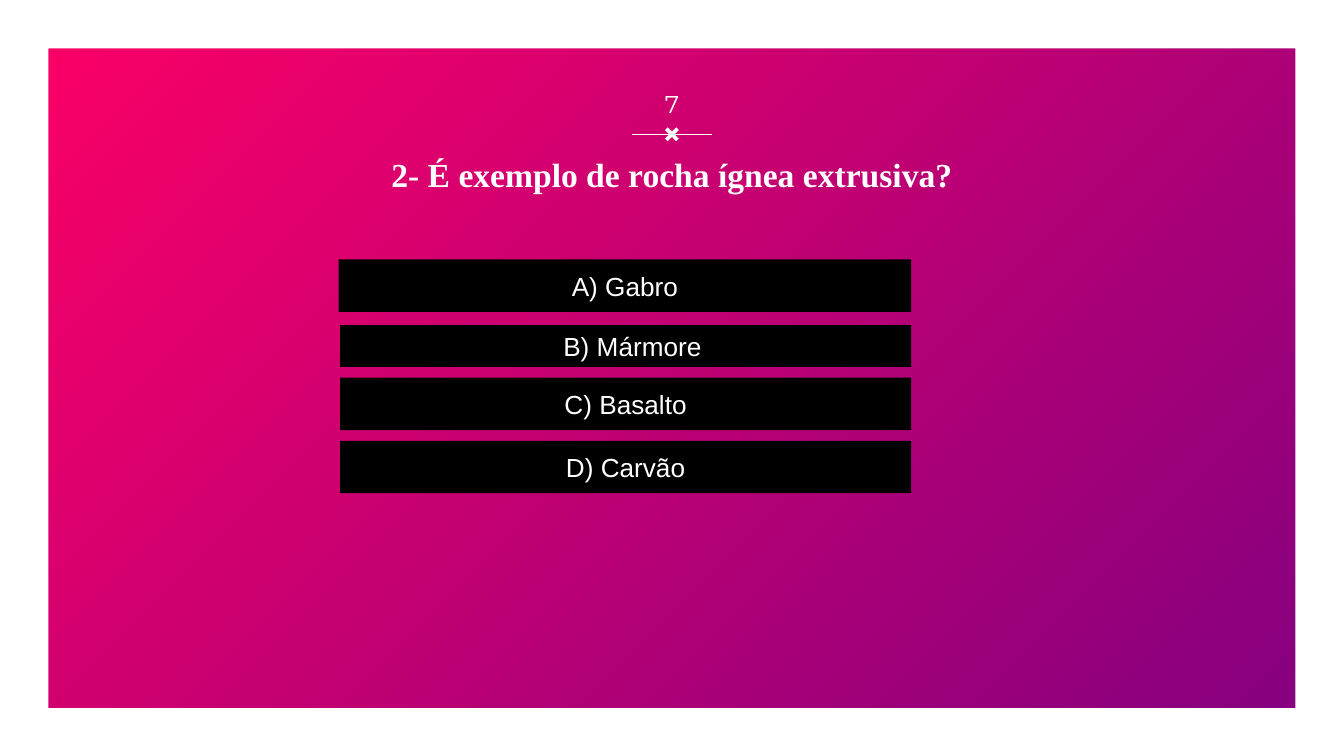
import pptx
import pptx.util
from lxml import etree
from pptx.dml.color import RGBColor
from pptx.enum.shapes import MSO_CONNECTOR, MSO_SHAPE
from pptx.enum.text import MSO_ANCHOR, PP_ALIGN
from pptx.oxml.ns import qn

Inches = pptx.util.Inches
Pt = pptx.util.Pt

COLORS = {"pink": "FF0066", "purple": "800080", "white": "FFFFFF", "black": "000000"}

# Answer, left, top, width, height, left inset
ANSWERS = [
    ("A) Gabro", 2.52, 1.93, 4.26, 0.39, 0.1),
    ("B) Mármore", 2.53, 2.42, 4.25, 0.31, 0.2),
    ("C) Basalto", 2.53, 2.81, 4.25, 0.39, 0.1),
    ("D) Carvão", 2.53, 3.28, 4.25, 0.39, 0.1),
]


def color(name):
    return RGBColor.from_string(COLORS[name])


def paint_background(page):
    fill = page.background.fill
    fill.gradient()
    fill.gradient_angle = 315
    for stop, name, position in zip(fill.gradient_stops, ("pink", "purple"), (0, 1)):
        stop.color.rgb = color(name)
        stop.position = position


def add_shape(page, kind, bounds, fill, adjustment=None):
    shape = page.shapes.add_shape(kind, *map(Inches, bounds))
    shape.shadow.inherit = False
    shape.fill.solid()
    shape.fill.fore_color.rgb = color(fill)
    shape.line.fill.background()
    if adjustment is not None:
        shape.adjustments[0] = adjustment
    return shape


def add_line(page, start, end):
    line = page.shapes.add_connector(MSO_CONNECTOR.STRAIGHT, *map(Inches, start + end))
    line.line.color.rgb = color("white")
    line.line.width = Pt(0.75)
    etree.SubElement(line._element.spPr, qn("a:effectLst"))


def write_text(shape, text, font, size, bold=False, left=0.1, vertical=0.05):
    frame = shape.text_frame
    frame.word_wrap = True
    frame.vertical_anchor = MSO_ANCHOR.MIDDLE
    frame.margin_left, frame.margin_right = Inches(left), Inches(0.1)
    frame.margin_top = frame.margin_bottom = Inches(vertical)
    frame.text = text
    para = frame.paragraphs[0]
    para.alignment = PP_ALIGN.CENTER
    span = para.runs[0]
    span.font.name = font
    span.font.size = Pt(size)
    span.font.bold = bold
    span.font.color.rgb = color("white")


def add_text(page, bounds, text, font, size, bold=False):
    box = page.shapes.add_textbox(*map(Inches, bounds))
    write_text(box, text, font, size, bold, vertical=0.1)


def main():
    # Widescreen page, 16:9
    deck = pptx.Presentation()
    deck.slide_width = Inches(10)
    deck.slide_height = deck.slide_width * 9 // 16
    page = deck.slides.add_slide(deck.slide_layouts[6])

    # Background, border and divider
    paint_background(page)
    add_shape(page, MSO_SHAPE.FRAME, (0, 0, 10, 5.63), "white", 0.064)
    add_line(page, (4.7, 1), (5.3, 1))
    add_shape(page, MSO_SHAPE.MATH_MULTIPLY, (4.92, 0.92, 0.16, 0.16), "white", 0.174)

    # Question and page number
    add_text(page, (0.36, 1.08, 9.28, 0.43), "2- É exemplo de rocha ígnea extrusiva?",
             "Times New Roman", 18, bold=True)
    add_text(page, (4.7, 0.56, 0.6, 0.43), "7", "Montserrat", 13)

    # Answers
    for text, *bounds, inset in ANSWERS:
        bar = add_shape(page, MSO_SHAPE.RECTANGLE, bounds, "black")
        write_text(bar, text, "Arial", 14, left=inset)

    deck.save("out.pptx")


if __name__ == "__main__":
    main()
